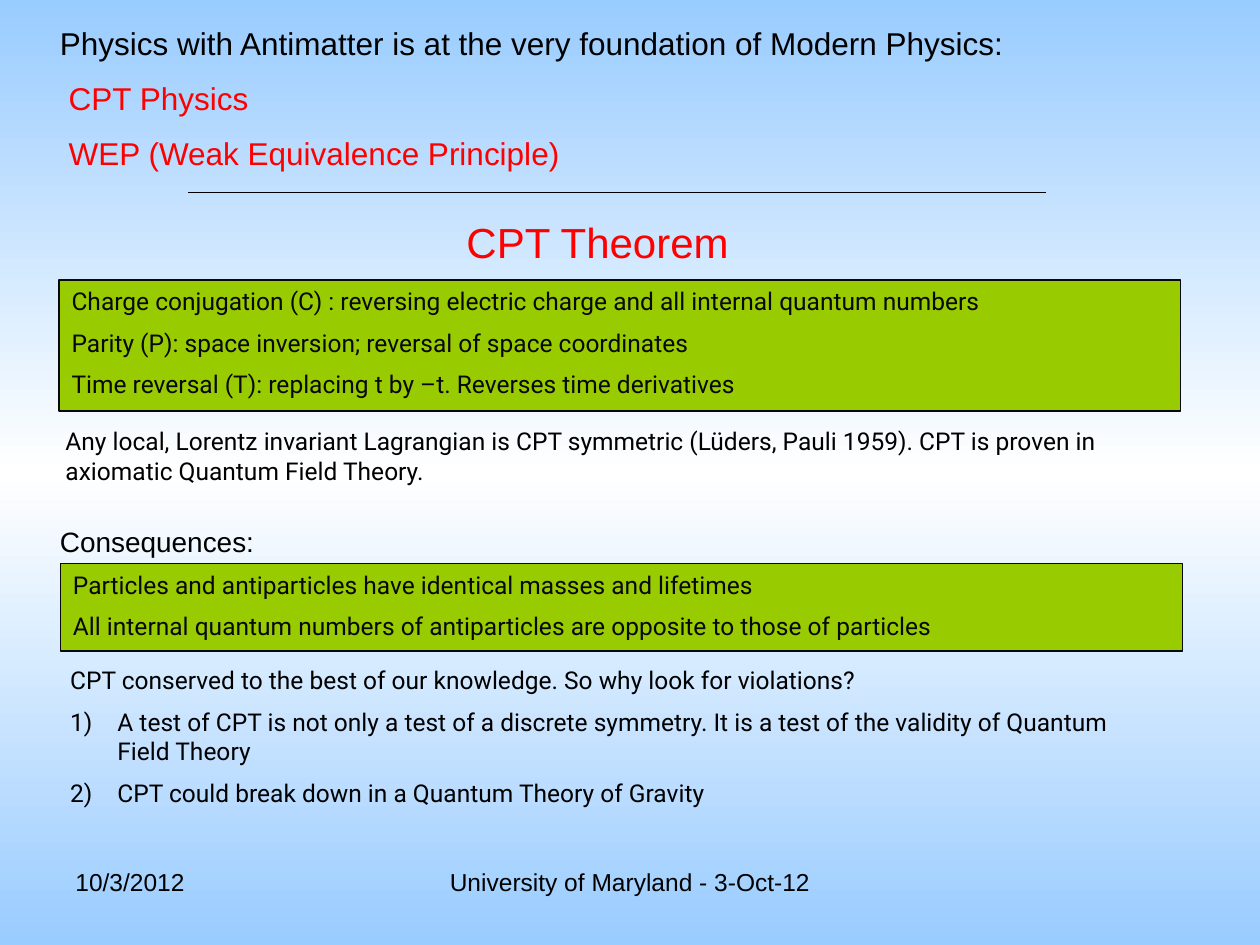
from copy import deepcopy
from dataclasses import dataclass

from lxml.etree import SubElement
from pptx import Presentation
from pptx.dml.color import RGBColor as RGB
from pptx.enum.shapes import MSO_CONNECTOR as CONN, MSO_SHAPE as SHAPE
from pptx.enum.text import MSO_ANCHOR as ANCHOR, MSO_AUTO_SIZE as AUTO, PP_ALIGN as ALIGN
from pptx.oxml.ns import qn
from pptx.util import Pt


@dataclass(frozen=True)
class Theme:
    black: RGB = RGB(0, 0, 0)
    ink: RGB = RGB(0x08, 0x08, 0x08)
    red: RGB = RGB(0xFF, 0, 0)
    green: RGB = RGB(0x99, 0xCC, 0)
    sky: RGB = RGB(0x99, 0xCC, 0xFF)
    white: RGB = RGB(0xFF, 0xFF, 0xFF)
    head: str = "Arial"
    body: str = "Roboto"
    title: int = 24
    intro: int = 18
    label: int = 16
    text: int = 14


T = Theme()


def write(sp, lines, size, font, color, align=ALIGN.LEFT, gap=7, wrap=True):
    """Fill a shape with one paragraph per line, gap points apart."""
    tf = sp.text_frame
    tf.word_wrap = wrap
    tf.auto_size = AUTO.NONE
    tf.vertical_anchor = ANCHOR.TOP
    tf.margin_left = tf.margin_right = Pt(7.2)
    tf.margin_top = tf.margin_bottom = Pt(3.6)
    for i, line in enumerate(lines):
        p = tf.add_paragraph() if i else tf.paragraphs[0]
        p.alignment = align
        if i:
            p.space_before = Pt(gap)
        r = p.add_run()
        r.text = line
        r.font.size = Pt(size)
        r.font.name = font
        r.font.color.rgb = color
    return tf.paragraphs


def indent(p, left, first=0):
    pPr = p._p.get_or_add_pPr()
    pPr.set("marL", str(Pt(left)))
    pPr.set("indent", str(Pt(first)))
    return pPr


prs = Presentation()
prs.slide_width, prs.slide_height = Pt(720), Pt(540)
s = prs.slides.add_slide(prs.slide_layouts[5])

# Background: sky to white and back, from top to bottom
fill = s.background.fill
fill.gradient()
fill.gradient_angle = 90
gs_list = s._element.find(".//" + qn("a:gsLst"))
gs_list.append(deepcopy(gs_list[-1]))
for stop, position, color in zip(fill.gradient_stops, (0, 0.5, 1), (T.sky, T.white, T.sky)):
    stop.position = position
    stop.color.rgb = color

# Title
title = s.shapes.title
title.left, title.top, title.width, title.height = Pt(214.5), Pt(120.3), Pt(254), Pt(36)
write(title, ["CPT Theorem"], T.title, T.head, T.red, ALIGN.CENTER)

# Introduction and the rule below it
intro = s.shapes.add_textbox(Pt(27.2), Pt(10), Pt(659.5), Pt(93.6))
opening, *topics = write(intro, [
    "Physics with Antimatter is at the very foundation of Modern Physics:",
    "CPT Physics",
    "WEP (Weak Equivalence Principle)",
], T.intro, T.head, T.red, gap=10)
opening.runs[0].font.color.rgb = T.black
for p in topics:
    indent(p, 5)

rule = s.shapes.add_connector(CONN.STRAIGHT, Pt(107.3), Pt(110), Pt(597.6), Pt(110))
rule.line.color.rgb = T.black
rule.line.width = Pt(0.75)
SubElement(rule._element.spPr, qn("a:effectLst"))

# Green boxes
for left, top, height, lines in (
    (33.8, 160, 75, [
        "Charge conjugation (C) : reversing electric charge and all internal quantum numbers",
        "Parity (P): space inversion; reversal of space coordinates",
        "Time reversal (T): replacing t by –t. Reverses time derivatives",
    ]),
    (34.6, 322, 50, [
        "Particles and antiparticles have identical masses and lifetimes",
        "All internal quantum numbers of antiparticles are opposite to those of particles",
    ]),
):
    box = s.shapes.add_shape(SHAPE.RECTANGLE, Pt(left), Pt(top), Pt(641), Pt(height))
    box.shadow.inherit = False
    box.fill.solid()
    box.fill.fore_color.rgb = T.green
    box.line.color.rgb = T.ink
    box.line.width = Pt(0.75)
    write(box, lines, T.text, T.body, T.ink)

# Single-paragraph texts
for left, top, width, height, line, size, font, align, wrap in (
    (30.3, 240, 658, 41, "Any local, Lorentz invariant Lagrangian is CPT symmetric (Lüders, Pauli 1959). "
     "CPT is proven in axiomatic Quantum Field Theory.", T.text, T.body, ALIGN.LEFT, True),
    (27.2, 296, 125, 26.6, "Consequences:", T.label, T.head, ALIGN.LEFT, False),
    (36, 492, 168, 37.5, "10/3/2012", T.text, T.head, ALIGN.LEFT, True),
    (246, 492, 228, 37.5, "University of Maryland - 3-Oct-12", T.text, T.head, ALIGN.CENTER, True),
):
    sp = s.shapes.add_textbox(Pt(left), Pt(top), Pt(width), Pt(height))
    write(sp, [line], size, font, T.black, align, wrap=wrap)

# Question with numbered reasons
reasons = s.shapes.add_textbox(Pt(33), Pt(376.6), Pt(635), Pt(90.7))
for i, p in enumerate(write(reasons, [
    "CPT conserved to the best of our knowledge. So why look for violations?",
    "A test of CPT is not only a test of a discrete symmetry. "
    "It is a test of the validity of Quantum Field Theory",
    "CPT could break down in a Quantum Theory of Gravity",
], T.text, T.body, T.black)):
    pPr = indent(p, 27, -27)
    if i:
        SubElement(pPr, qn("a:buFont"), typeface=T.body)
        SubElement(pPr, qn("a:buAutoNum"), type="arabicParenR")

prs.save("out.pptx")
